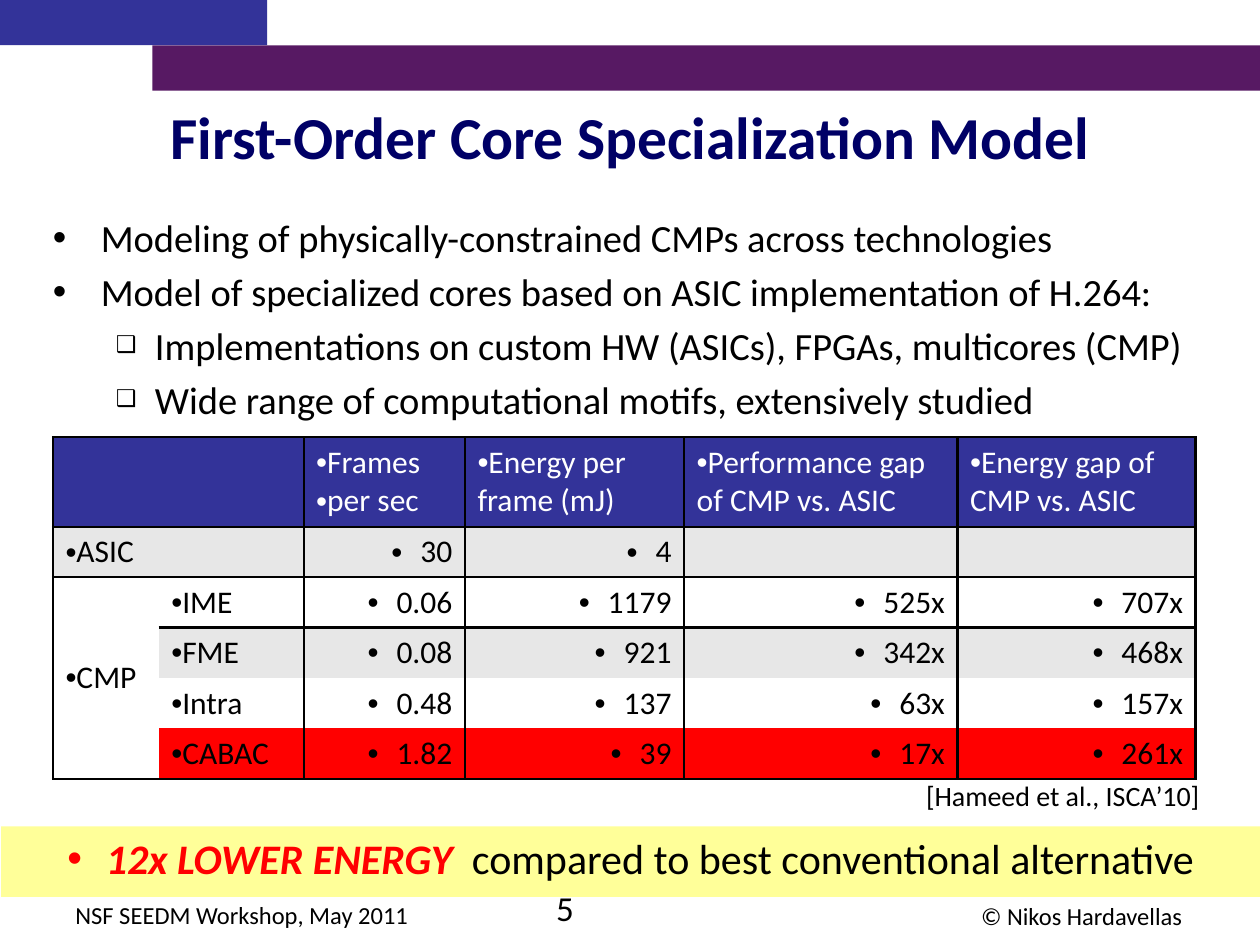
from lxml import etree
from pptx import Presentation
from pptx.dml.color import RGBColor
from pptx.enum.shapes import MSO_SHAPE
from pptx.enum.text import MSO_ANCHOR, MSO_AUTO_SIZE, PP_ALIGN
from pptx.oxml.ns import qn
from pptx.util import Inches, Pt

RECTANGLE = MSO_SHAPE.RECTANGLE
TOP, MIDDLE = MSO_ANCHOR.TOP, MSO_ANCHOR.MIDDLE
LEFT, CENTER, RIGHT = PP_ALIGN.LEFT, PP_ALIGN.CENTER, PP_ALIGN.RIGHT
NO_AUTOFIT = MSO_AUTO_SIZE.NONE

BLACK = RGBColor(0x00, 0x00, 0x00)
WHITE = RGBColor(0xFF, 0xFF, 0xFF)
NAVY = RGBColor(0x00, 0x00, 0x66)
BLUE = RGBColor(0x33, 0x33, 0x99)
PURPLE = RGBColor(0x57, 0x19, 0x63)
GRAY = RGBColor(0xE7, 0xE7, 0xE7)
RED = RGBColor(0xFF, 0x00, 0x00)
YELLOW = RGBColor(0xFF, 0xFF, 0x99)

ROWS = [
    ["", "", "Frames\nper sec", "Energy per frame (mJ)",
     "Performance gap of CMP vs. ASIC", "Energy gap of CMP vs. ASIC"],
    ["ASIC", "", "30", "4", "", ""],
    ["CMP", "IME", "0.06", "1179", "525x", "707x"],
    ["", "FME", "0.08", "921", "342x", "468x"],
    ["", "Intra", "0.48", "137", "63x", "157x"],
    ["", "CABAC", "1.82", "39", "17x", "261x"],
]
ROW_FILLS = [BLUE, GRAY, WHITE, GRAY, WHITE, RED]
COLUMN_WIDTHS = [0.84, 1.15, 1.28, 1.74, 2.17, 1.89]
ROW_HEIGHTS = [0.71] + [0.4] * 5
CMP_ROW = 2
HANGING = 0.23


class SlideBuilder:
    font = "Calibri"

    def __init__(self, slide):
        self.slide = slide

    def place(self, shape, box):
        shape.left, shape.top, shape.width, shape.height = map(Inches, box)

    def add_run(self, paragraph, text, size, color, bold=False, italic=False):
        run = paragraph.add_run()
        run.text = text
        run.font.name = self.font
        run.font.size = Pt(size)
        run.font.color.rgb = color
        run.font.bold = bold
        run.font.italic = italic

    def bullet(self, paragraph, character, margin=0, indent=0, percent=100):
        properties = paragraph._p.get_or_add_pPr()
        properties.set("marL", str(Inches(margin)))
        properties.set("indent", str(Inches(indent)))
        etree.SubElement(properties, qn("a:buSzPct"), val=str(percent * 1000))
        etree.SubElement(properties, qn("a:buFont"), typeface="Arial")
        etree.SubElement(properties, qn("a:buChar"), char=character)

    def title(self, text, box):
        shape = self.slide.shapes.title
        self.place(shape, box)
        shape.text_frame.vertical_anchor = MIDDLE
        paragraph = shape.text_frame.paragraphs[0]
        paragraph.alignment = CENTER
        self.add_run(paragraph, text, 34, NAVY, bold=True)

    def body(self, items, box):
        shape = self.slide.placeholders[1]
        self.place(shape, box)
        frame = shape.text_frame
        frame.auto_size = NO_AUTOFIT
        for index, (level, text) in enumerate(items):
            paragraph = frame.add_paragraph() if index else frame.paragraphs[0]
            paragraph.level = level
            if level:
                self.bullet(paragraph, "❑", 0.81, -0.31, 60)
            else:
                self.bullet(paragraph, "•", 0.38, -0.38)
            paragraph.space_before = Pt(4.4 if index else 0)
            self.add_run(paragraph, text, 22, BLACK)

    def rectangle(self, box, color):
        shape = self.slide.shapes.add_shape(RECTANGLE, *map(Inches, box))
        shape.shadow.inherit = False
        shape.fill.solid()
        shape.fill.fore_color.rgb = color
        shape.line.fill.background()
        return shape

    def banner(self, highlight, rest, box):
        shape = self.rectangle(box, YELLOW)
        shape.text_frame.vertical_anchor = TOP
        paragraph = shape.text_frame.paragraphs[0]
        paragraph.alignment = CENTER
        self.bullet(paragraph, "•", HANGING, -HANGING)
        self.add_run(paragraph, highlight, 24, RED, bold=True, italic=True)
        self.add_run(paragraph, rest, 24, BLACK)

    def label(self, text, size, box, alignment=CENTER):
        shape = self.slide.shapes.add_textbox(*map(Inches, box))
        shape.text_frame.word_wrap = False
        paragraph = shape.text_frame.paragraphs[0]
        paragraph.alignment = alignment
        self.add_run(paragraph, text, size, BLACK)

    def borders(self, cell, sides):
        properties = cell._tc.get_or_add_tcPr()
        for side in "LRTB":
            line = etree.SubElement(properties, qn(f"a:ln{side}"), w=str(Pt(1.5)))
            if side in sides:
                fill = etree.SubElement(line, qn("a:solidFill"))
                etree.SubElement(fill, qn("a:srgbClr"), val=str(BLACK))
            else:
                etree.SubElement(line, qn("a:noFill"))

    def cell_sides(self, row, column):
        """The label columns share one block, as do the rows below IME."""
        sides = {"L", "R", "T", "B"}
        if column < 2:
            sides.remove("R" if column == 0 else "L")
        if column and row > CMP_ROW + 1:
            sides.remove("T")
        if column and CMP_ROW < row < len(ROWS) - 1:
            sides.remove("B")
        return sides

    def table(self, box):
        table = self.slide.shapes.add_table(
            len(ROWS), len(COLUMN_WIDTHS), *map(Inches, box)).table
        table.first_row = table.horz_banding = False
        for column, width in zip(table.columns, COLUMN_WIDTHS):
            column.width = Inches(width)
        for row, height in zip(table.rows, ROW_HEIGHTS):
            row.height = Inches(height)
        table.cell(CMP_ROW, 0).merge(table.cell(len(ROWS) - 1, 0))

        for row, texts in enumerate(ROWS):
            for column, text in enumerate(texts):
                cell = table.cell(row, column)
                self.borders(cell, self.cell_sides(row, column))
                merged = column == 0 and row >= CMP_ROW
                cell.fill.solid()
                cell.fill.fore_color.rgb = WHITE if merged else ROW_FILLS[row]
                cell.vertical_anchor = MIDDLE if merged else TOP
                if text:
                    numeric = row > 0 and column > 1
                    self.cell_text(cell, text, numeric, BLACK if row else WHITE)

    def cell_text(self, cell, text, numeric, color):
        frame = cell.text_frame
        hanging = HANGING if numeric else 0
        for index, line in enumerate(text.split("\n")):
            paragraph = frame.add_paragraph() if index else frame.paragraphs[0]
            paragraph.alignment = RIGHT if numeric else LEFT
            self.bullet(paragraph, "•", hanging, -hanging)
            self.add_run(paragraph, line, 18, color)


def main():
    presentation = Presentation()
    presentation.slide_width = Inches(10)
    presentation.slide_height = Inches(7.5)
    slide = presentation.slides.add_slide(presentation.slide_layouts[1])
    builder = SlideBuilder(slide)

    # Header bars and footer
    builder.rectangle((1.21, 0.36, 8.79, 0.36), PURPLE)
    builder.rectangle((0, 0, 2.12, 0.36), BLUE)
    builder.label("© Nikos Hardavellas", 14, (7.67, 7.1, 1.83, 0.34))
    builder.label("5", 20, (4.22, 6.99, 0.53, 0.44))
    builder.label("NSF SEEDM Workshop, May 2011", 14, (0.48, 7.09, 2.88, 0.34))

    # Title, list and conclusion
    builder.title("First-Order Core Specialization Model", (0, 0.72, 10, 0.72))
    builder.body([
        (0, "Modeling of physically-constrained CMPs across technologies"),
        (0, "Model of specialized cores based on ASIC implementation of H.264:"),
        (1, "Implementations on custom HW (ASICs), FPGAs, multicores (CMP)"),
        (1, "Wide range of computational motifs, extensively studied"),
    ], (0.32, 1.65, 9.2, 4.81))
    builder.banner(" 12x LOWER ENERGY ", " compared to best conventional alternative",
                   (0.01, 6.56, 9.99, 0.56))

    # Measurements and their citation
    builder.table((0.42, 3.47, 9.07, 2.71))
    builder.label("[Hameed et al., ISCA’10]", 16, (7.21, 6.13, 2.41, 0.37), RIGHT)

    presentation.save("out.pptx")


if __name__ == "__main__":
    main()
